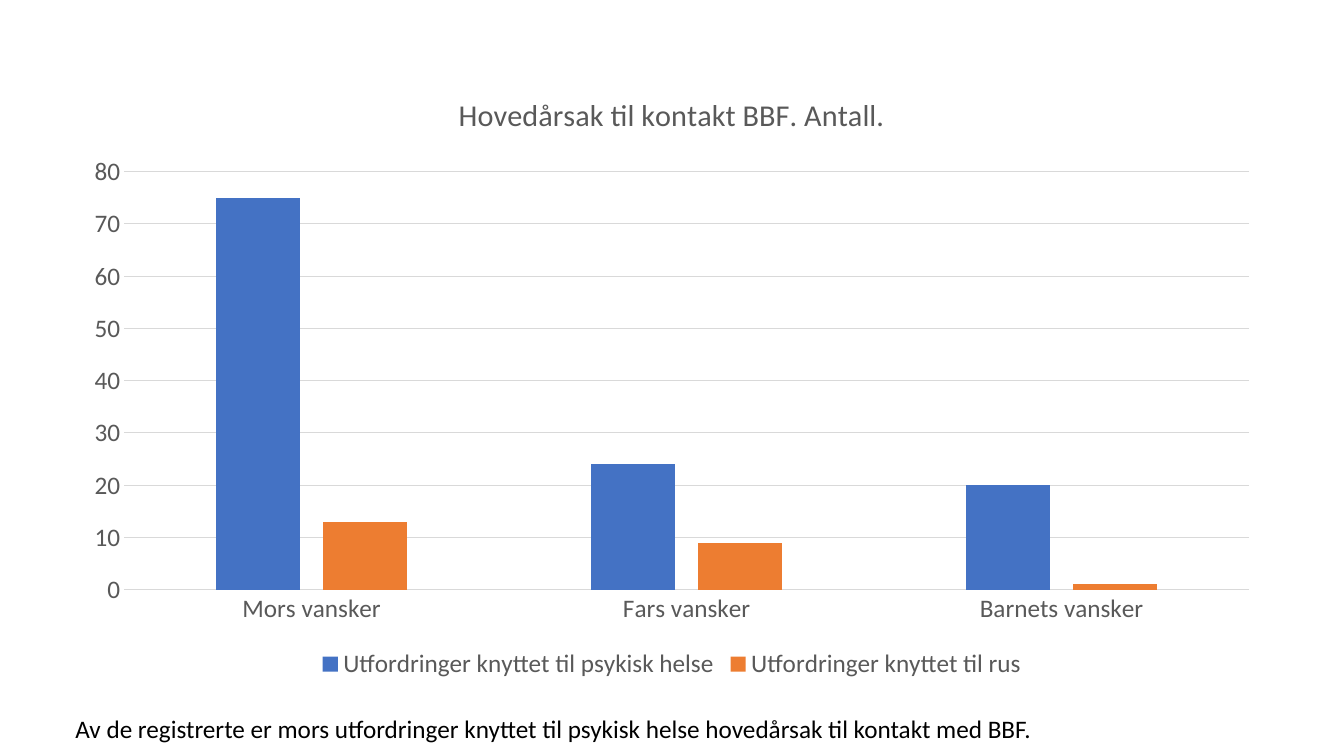
from pptx import Presentation
from pptx.chart.data import CategoryChartData
from pptx.dml.color import RGBColor
from pptx.enum.chart import XL_CHART_TYPE as Kind, XL_LEGEND_POSITION as Pos, XL_TICK_MARK as Tick
from pptx.enum.text import MSO_AUTO_SIZE as Fit
from pptx.util import Pt

HUES = {"text": "000000", "label": "595959", "grid": "D9D9D9",
        "health": "4472C4", "drugs": "ED7D31"}
CAUSES = ["Mors vansker", "Fars vansker", "Barnets vansker"]
SERIES = [("Utfordringer knyttet til psykisk helse", (75, 24, 20), "health"),
          ("Utfordringer knyttet til rus", (13, 9, 1), "drugs")]


def rgb(name):
    return RGBColor.from_string(HUES[name])


def put(item, **values):
    """Set each named attribute of item."""
    for name, value in values.items():
        setattr(item, name, value)


def style(font, hue, size=18):
    put(font, name="Calibri", size=Pt(size), bold=False)
    font.color.rgb = rgb(hue)


def rule(line):
    line.width = Pt(0.75)
    line.color.rgb = rgb("grid")


def add_causes(slide, box):
    data = CategoryChartData()
    data.categories = CAUSES
    for name, counts, _ in SERIES:
        data.add_series(name, counts)
    chart = slide.shapes.add_chart(Kind.COLUMN_CLUSTERED, *map(Pt, box), data).chart
    style(chart.font, "text")

    chart.has_title = True
    title = chart.chart_title
    title.include_in_layout = False
    title.text_frame.text = "Hovedårsak til kontakt BBF. Antall."
    style(title.text_frame.paragraphs[0].runs[0].font, "label", 21.6)

    chart.has_legend = True
    put(chart.legend, position=Pos.BOTTOM, include_in_layout=False)
    style(chart.legend.font, "label")

    plot = chart.plots[0]
    put(plot, gap_width=219, overlap=-27, vary_by_categories=False)
    for bars, (_, _, hue) in zip(plot.series, SERIES):
        bars.format.fill.solid()
        bars.format.fill.fore_color.rgb = rgb(hue)

    for axis in (chart.category_axis, chart.value_axis):
        put(axis, major_tick_mark=Tick.NONE, minor_tick_mark=Tick.NONE)
        style(axis.tick_labels.font, "label")
    rule(chart.category_axis.format.line)
    counts = chart.value_axis
    put(counts, minimum_scale=0, maximum_scale=80, major_unit=10,
        has_major_gridlines=True)
    counts.format.line.fill.background()
    rule(counts.major_gridlines.format.line)


def add_note(slide, box):
    frame = slide.shapes.add_textbox(*map(Pt, box)).text_frame
    put(frame, word_wrap=False, auto_size=Fit.SHAPE_TO_FIT_TEXT)
    run = frame.paragraphs[0].add_run()
    run.text = ("Av de registrerte er mors utfordringer knyttet til psykisk helse "
                "hovedårsak til kontakt med BBF.")
    style(run.font, "text")


def main():
    deck = Presentation()
    put(deck, slide_width=Pt(960), slide_height=Pt(540))
    slide = deck.slides.add_slide(deck.slide_layouts[6])
    add_causes(slide, (50.4, 50.4, 859, 438.5))
    add_note(slide, (46.8, 506.2, 702.7, 29))
    deck.save("out.pptx")


if __name__ == "__main__":
    main()
